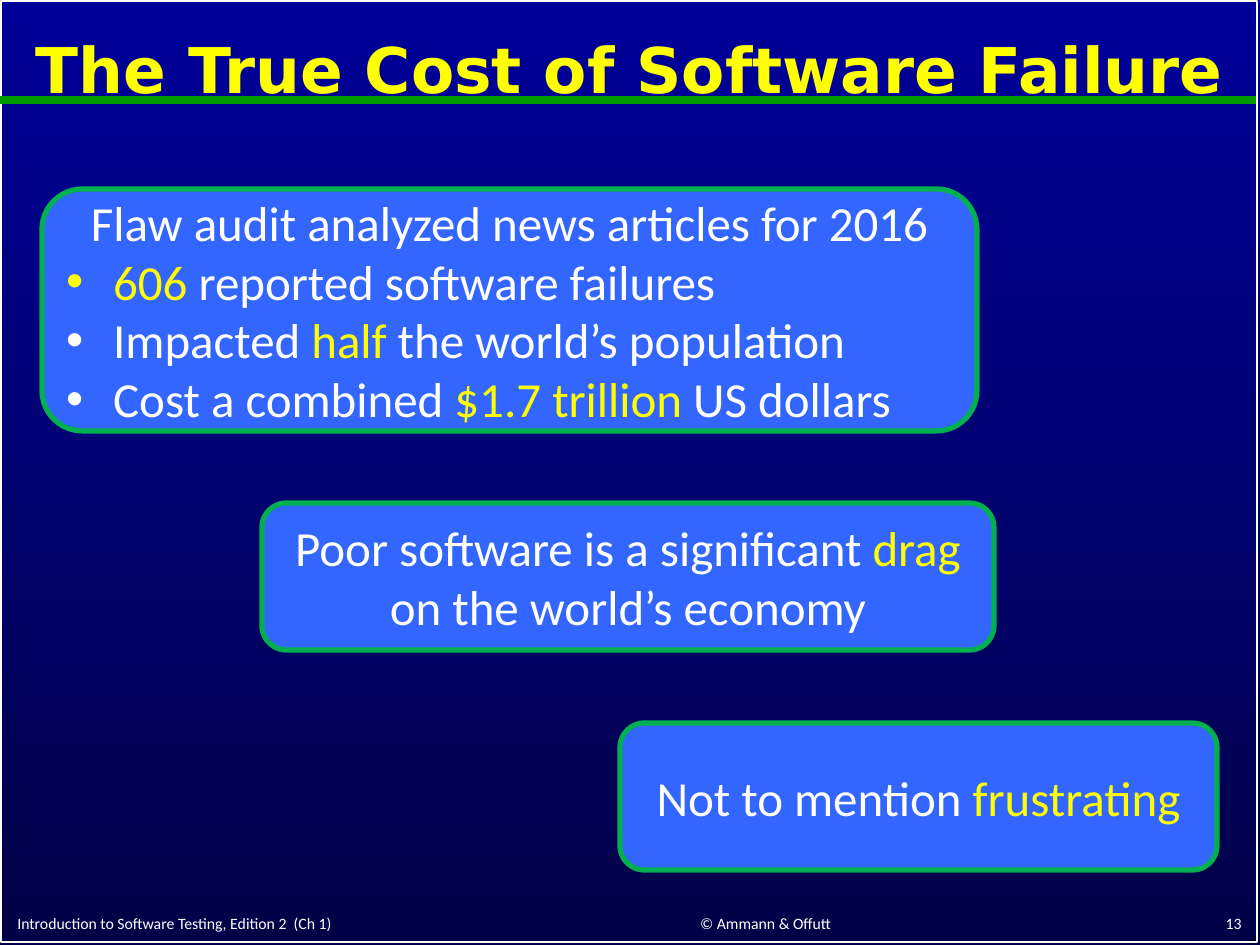
from dataclasses import dataclass

from lxml.etree import SubElement
from pptx import Presentation
from pptx.dml.color import RGBColor as Rgb
from pptx.enum.shapes import MSO_CONNECTOR as Connector, MSO_SHAPE as Shape
from pptx.enum.text import MSO_ANCHOR as Anchor, PP_ALIGN as Align
from pptx.oxml.ns import qn
from pptx.util import Emu, Pt

EMU_PER_PX = 914400 / 126
TITLE_ONLY = 5


@dataclass(frozen=True)
class Theme:
    sky: Rgb = Rgb(0x00, 0x00, 0x99)
    night: Rgb = Rgb(0x00, 0x00, 0x47)
    text: Rgb = Rgb(0xFF, 0xFF, 0xFF)
    accent: Rgb = Rgb(0xFF, 0xFF, 0x00)
    rule: Rgb = Rgb(0x00, 0x99, 0x00)
    card: Rgb = Rgb(0x33, 0x66, 0xFF)
    card_edge: Rgb = Rgb(0x00, 0xB0, 0x50)
    title_font: str = "DejaVu Sans"
    body_font: str = "Calibri"
    title_size: int = 36
    body_size: int = 28
    footer_size: int = 9
    bullet_indent: int = 47


def px(*lengths):
    return [Emu(round(length * EMU_PER_PX)) for length in lengths]


class SlideBuilder:
    def __init__(self, slide, theme):
        self.slide = slide
        self.theme = theme

    def background(self):
        fill = self.slide.background.fill
        fill.gradient()
        fill.gradient_angle = 270
        for stop, color in zip(fill.gradient_stops, (self.theme.sky, self.theme.night)):
            stop.color.rgb = color

    def style(self, paragraph, size, color, name):
        font = paragraph.font
        font.size = Pt(size)
        font.color.rgb = color
        font.name = name

    def frame(self, *box):
        border = self.slide.shapes.add_shape(Shape.RECTANGLE, *px(*box))
        border.shadow.inherit = False
        border.fill.background()
        border.line.color.rgb = self.theme.text
        border.line.width = Pt(1)

    def rule(self, left, right, y):
        line = self.slide.shapes.add_connector(Connector.STRAIGHT, *px(left, y, right, y))
        SubElement(line._element.spPr, qn("a:effectLst"))
        line.line.color.rgb = self.theme.rule
        line.line.width = Pt(4.5)

    def title(self, text, *box):
        heading = self.slide.shapes.title
        self.slide.shapes._spTree.append(heading._element)
        heading.left, heading.top, heading.width, heading.height = px(*box)
        heading.text_frame.text = text
        heading.text_frame.vertical_anchor = Anchor.MIDDLE
        paragraph = heading.text_frame.paragraphs[0]
        paragraph.alignment = Align.CENTER
        paragraph.line_spacing = 0.9
        self.style(paragraph, self.theme.title_size, self.theme.accent, self.theme.title_font)
        paragraph.font.bold = True

    def footer(self, text, align, *box):
        note = self.slide.shapes.add_textbox(*px(*box)).text_frame
        note.word_wrap = True
        note.vertical_anchor = Anchor.BOTTOM
        note.text = text
        paragraph = note.paragraphs[0]
        paragraph.alignment = align
        self.style(paragraph, self.theme.footer_size, self.theme.text, self.theme.body_font)

    def bullet(self, paragraph):
        indent, = px(self.theme.bullet_indent)
        properties = paragraph._p.get_or_add_pPr()
        properties.set("marL", str(indent))
        properties.set("indent", str(-indent))
        SubElement(properties, qn("a:buFont"), typeface="Arial")
        SubElement(properties, qn("a:buChar"), char="•")

    def card(self, box, heading, points=()):
        panel = self.slide.shapes.add_shape(Shape.ROUNDED_RECTANGLE, *px(*box))
        panel.shadow.inherit = False
        panel.fill.solid()
        panel.fill.fore_color.rgb = self.theme.card
        panel.line.color.rgb = self.theme.card_edge
        panel.line.width = Pt(3)
        body = panel.text_frame
        body.word_wrap = True
        body.vertical_anchor = Anchor.MIDDLE
        self.marked_text(body.paragraphs[0], heading, Align.CENTER)
        for point in points:
            paragraph = body.add_paragraph()
            self.bullet(paragraph)
            self.marked_text(paragraph, point, Align.LEFT)

    def marked_text(self, paragraph, text, align):
        paragraph.alignment = align
        self.style(paragraph, self.theme.body_size, self.theme.text, self.theme.body_font)
        for index, part in enumerate(text.split("*")):
            if part:
                run = paragraph.add_run()
                run.text = part
                run.font.color.rgb = self.theme.accent if index % 2 else self.theme.text


def main():
    deck = Presentation()
    deck.slide_width, deck.slide_height = px(1260, 945)
    slide = deck.slides.add_slide(deck.slide_layouts[TITLE_ONLY])
    builder = SlideBuilder(slide, Theme())

    builder.background()
    builder.frame(1, 1, 1256, 941)
    builder.rule(0, 1256, 100)
    builder.title("The True Cost of Software Failure", 6, 14, 1247, 119)

    builder.footer("Introduction to Software Testing, Edition 2  (Ch 1)", Align.LEFT, 5, 904, 529, 35)
    builder.footer("© Ammann & Offutt", Align.CENTER, 566, 904, 399, 35)
    builder.footer("13", Align.RIGHT, 992, 904, 262, 35)

    builder.card(
        (42, 189, 935, 242),
        "Flaw audit analyzed news articles for 2016",
        (
            "*606* reported software failures",
            "Impacted *half* the world’s population",
            "Cost a combined *$1.7 trillion *US dollars",
        ),
    )
    builder.card((262, 503, 732, 147), "Poor software is a significant *drag* on the world’s economy")
    builder.card((620, 723, 597, 147), "Not to mention *frustrating*")

    deck.save("out.pptx")


if __name__ == "__main__":
    main()
